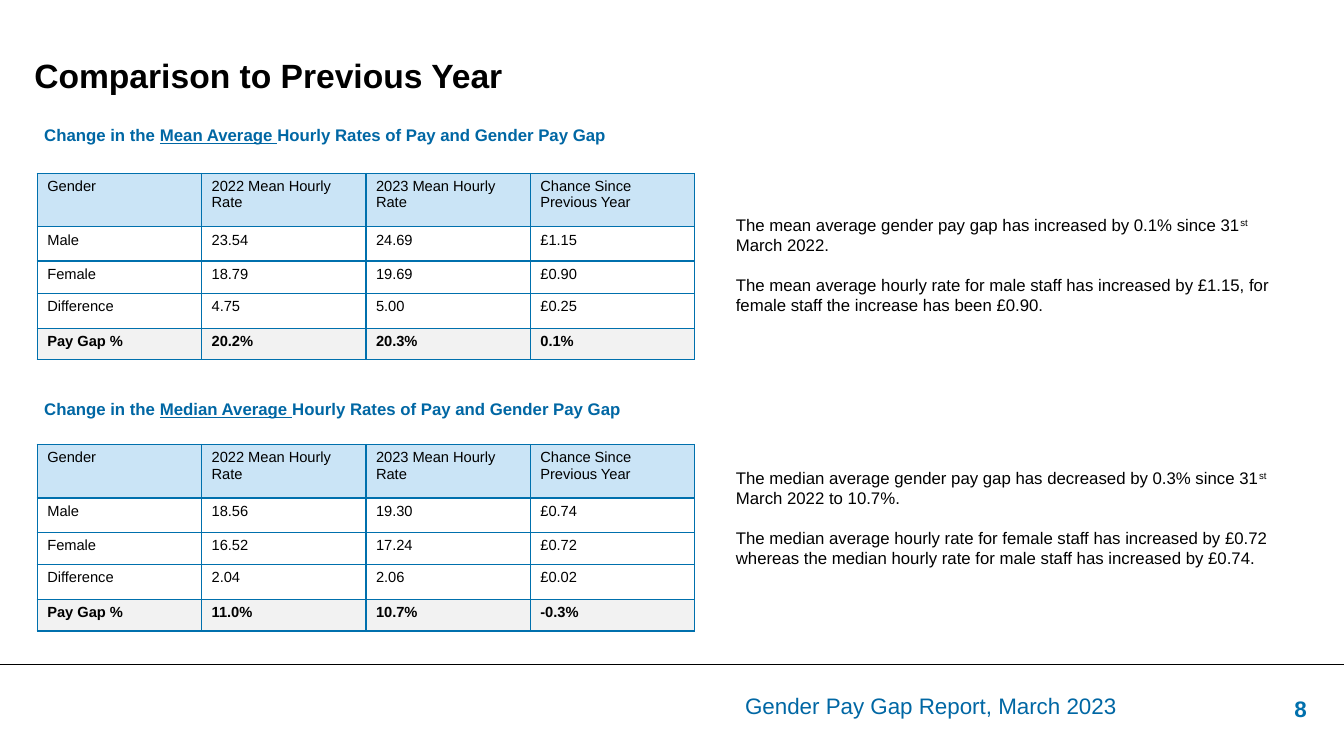
from lxml import etree
from pptx import Presentation
from pptx import util as u
from pptx.dml.color import RGBColor
from pptx.enum import shapes, text
from pptx.oxml.ns import qn

PX = 9144  # 100 px to the inch
BLACK = RGBColor(0x00, 0x00, 0x00)
WHITE = RGBColor(0xFF, 0xFF, 0xFF)
BLUE = RGBColor(0x00, 0x67, 0xA4)
BORDER_BLUE = RGBColor(0x00, 0x70, 0xAD)
HEADER_FILL = RGBColor(0xCA, 0xE4, 0xF6)
TOTAL_FILL = RGBColor(0xF2, 0xF2, 0xF2)

HEADER = ["Gender", "2022 Mean Hourly Rate", "2023 Mean Hourly Rate",
          "Chance Since Previous Year"]
ROW_HEIGHTS = [53, 34, 32, 35, 31]
COL_WIDTH = 163

MEAN_ROWS = [
    ["Male", "23.54", "24.69", "£1.15"],
    ["Female", "18.79", "19.69", "£0.90"],
    ["Difference", "4.75", "5.00", "£0.25"],
    ["Pay Gap %", "20.2%", "20.3%", "0.1%"],
]
MEDIAN_ROWS = [
    ["Male", "18.56", "19.30", "£0.74"],
    ["Female", "16.52", "17.24", "£0.72"],
    ["Difference", "2.04", "2.06", "£0.02"],
    ["Pay Gap %", "11.0%", "10.7%", "-0.3%"],
]
MEAN_NOTES = [
    [("The mean average gender pay gap has increased by 0.1% since 31", False),
     ("st", True), (" March 2022.", False)],
    [("The mean average hourly rate for male staff has increased by £1.15, "
      "for female staff the increase has been £0.90.", False)],
]
MEDIAN_NOTES = [
    [("The median average gender pay gap has decreased by 0.3% since 31", False),
     ("st", True), (" March 2022 to 10.7%.", False)],
    [("The median average hourly rate for female staff has increased by £0.72 "
      "whereas the median hourly rate for male staff has increased by £0.74.", False)],
]


def px(*lengths):
    return [u.Emu(n * PX) for n in lengths]


def add_run(p, words, size, color, bold=False):
    r = p.add_run()
    r.text = words
    r.font.name = "Arial"
    r.font.size = u.Pt(size)
    r.font.bold = bold
    r.font.color.rgb = color
    return r


def add_textbox(s, box, inset=True):
    tf = s.shapes.add_textbox(*px(*box)).text_frame
    tf.word_wrap = True
    if not inset:
        tf.margin_left = tf.margin_right = tf.margin_top = tf.margin_bottom = 0
    return tf.paragraphs[0]


def add_borders(cell):
    tc_pr = cell._tc.get_or_add_tcPr()
    for i, side in enumerate(("a:lnL", "a:lnR", "a:lnT", "a:lnB")):
        ln = etree.Element(qn(side), w=str(u.Pt(1)))
        fill = etree.SubElement(ln, qn("a:solidFill"))
        etree.SubElement(fill, qn("a:srgbClr"), val=str(BORDER_BLUE))
        tc_pr.insert(i, ln)  # borders come before the cell fill


def add_title(s, box):
    p = add_textbox(s, box, inset=False)
    p.line_spacing = 0.9
    add_run(p, "Comparison to Previous Year", 24, BLACK, bold=True)


def add_heading(s, box, measure):
    p = add_textbox(s, box)
    add_run(p, "Change in the ", 12, BLUE, bold=True)
    add_run(p, measure + " Average ", 12, BLUE, bold=True).font.underline = True
    add_run(p, "Hourly Rates of Pay and Gender Pay Gap", 12, BLUE, bold=True)


def add_pay_table(s, left, top, rows):
    cells = [HEADER] + rows
    box = px(left, top, COL_WIDTH * len(HEADER), sum(ROW_HEIGHTS))
    table = s.shapes.add_table(len(cells), len(HEADER), *box).table
    for col in table.columns:
        col.width = u.Emu(COL_WIDTH * PX)
    last = len(cells) - 1
    fills = {0: HEADER_FILL, last: TOTAL_FILL}
    for i, values in enumerate(cells):
        table.rows[i].height = u.Emu(ROW_HEIGHTS[i] * PX)
        for j, value in enumerate(values):
            cell = table.cell(i, j)
            cell.fill.solid()
            cell.fill.fore_color.rgb = fills.get(i, WHITE)
            add_borders(cell)
            add_run(cell.text_frame.paragraphs[0], value, 10.5, BLACK, bold=i == last)


def add_notes_panel(s, box, notes):
    panel = s.shapes.add_shape(shapes.MSO_SHAPE.RECTANGLE, *px(*box))
    panel.shadow.inherit = False
    panel.fill.solid()
    panel.fill.fore_color.rgb = WHITE
    panel.line.fill.background()
    tf = panel.text_frame
    tf.word_wrap = True
    tf.vertical_anchor = text.MSO_ANCHOR.TOP
    for i, runs in enumerate(notes):
        p = tf.add_paragraph() if i else tf.paragraphs[0]
        p.alignment = text.PP_ALIGN.LEFT
        if i:
            p.space_before = u.Pt(14)
        for words, raised in runs:
            r = add_run(p, words, 12, BLACK)
            if raised:
                r._r.get_or_add_rPr().set("baseline", "30000")


def add_comparison(s, top, measure, rows, table_drop, notes, notes_drop, notes_width):
    """Heading, pay table and commentary, placed down from top."""
    add_heading(s, (34, top, 644, 30), measure)
    add_pay_table(s, 37, top + table_drop, rows)
    add_notes_panel(s, (720, top + notes_drop, notes_width, 111), notes)


def add_footer(s, top, width):
    # Rule across the slide
    rule = s.shapes.add_connector(shapes.MSO_CONNECTOR.STRAIGHT, *px(0, top, width, top))
    rule.line.color.rgb = BLACK
    rule.line.width = u.Pt(0.5)
    etree.SubElement(rule._element.spPr, qn("a:effectLst"))
    # Report name and page number
    p = add_textbox(s, (739, top + 31, 491, 35), inset=False)
    p.line_spacing = 0.9
    add_run(p, "Gender Pay Gap Report, March 2023", 16, BLUE)
    p = add_textbox(s, (1258, top + 26, 48, 37))
    p.alignment = text.PP_ALIGN.RIGHT
    add_run(p, "8", 16, BORDER_BLUE, bold=True)


def main():
    prs = Presentation()
    prs.slide_width, prs.slide_height = px(1333, 750)
    s = prs.slides.add_slide(prs.slide_layouts[6])
    add_footer(s, 659, 1333)
    add_title(s, (34, 59, 1016, 84))
    add_comparison(s, 119, "Mean", MEAN_ROWS, 53, MEAN_NOTES, 89, 576)
    add_comparison(s, 391, "Median", MEDIAN_ROWS, 50, MEDIAN_NOTES, 68, 592)
    prs.save("out.pptx")


if __name__ == "__main__":
    main()
